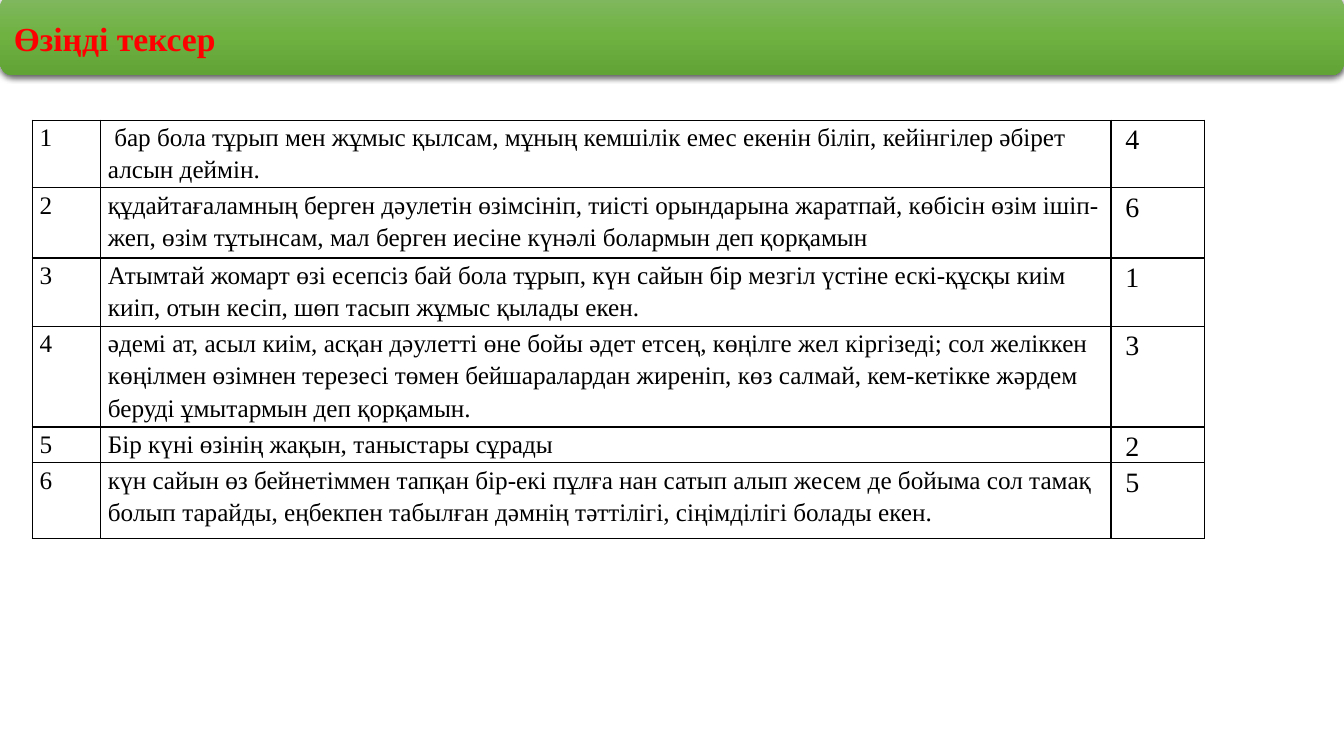
from copy import deepcopy

from lxml import etree
from pptx import Presentation
from pptx.dml.color import RGBColor
from pptx.enum.shapes import MSO_SHAPE
from pptx.enum.text import MSO_ANCHOR, PP_ALIGN
from pptx.oxml import parse_xml
from pptx.oxml.ns import nsdecls, qn
from pptx.util import Cm, Pt

ROUNDED_RECTANGLE = MSO_SHAPE.ROUNDED_RECTANGLE
MIDDLE = MSO_ANCHOR.MIDDLE
LEFT = PP_ALIGN.LEFT

BLACK = RGBColor(0x00, 0x00, 0x00)
RED = RGBColor(0xFF, 0x00, 0x00)
GREENS = (
    RGBColor(0x81, 0xB8, 0x61),
    RGBColor(0x6F, 0xB2, 0x42),
    RGBColor(0x62, 0xA3, 0x36),
)
FONT = "Times New Roman"

COLUMN_WIDTHS = (1.72, 25.47, 2.36)
ROW_HEIGHTS = (1.7, 1.77, 1.72, 2.54, 0.87, 1.91)
CELL_MARGIN = Cm(0.19)
ANSWER_MARGIN = Cm(0.36)
FIRST_LINE_INDENT = Cm(0.16)

STATEMENTS = (
    ("бар бола тұрып мен жұмыс қылсам, мұның кемшiлiк емес екенiн бiлiп, "
     "кейiнгiлер әбiрет алсын деймiн.", "4"),
    ("құдайтағаламның берген дәулетiн өзiмсiнiп, тиiстi орындарына жаратпай, "
     "көбiсiн өзiм iшiп-жеп, өзiм тұтынсам, мал берген иесiне күнәлi болармын "
     "деп қорқамын", "6"),
    ("Атымтай жомарт өзi есепсiз бай бола тұрып, күн сайын бiр мезгiл үстiне "
     "ескi-құсқы киiм киiп, отын кесiп, шөп тасып жұмыс қылады екен.", "1"),
    ("әдемi ат, асыл киiм, асқан дәулеттi өне бойы әдет етсең, көңiлге жел "
     "кiргiзедi; сол желiккен көңiлмен өзiмнен терезесi төмен бейшаралардан "
     "жиренiп, көз салмай, кем-кетiкке жәрдем берудi ұмытармын деп қорқамын.", "3"),
    ("Бiр күнi өзiнiң жақын, таныстары сұрады", "2"),
    ("күн сайын өз бейнетiммен тапқан бiр-екi пұлға нан сатып алып жесем де "
     "бойыма сол тамақ болып тарайды, еңбекпен табылған дәмнiң тәттiлiгi, "
     "сiңiмдiлiгi болады екен.", "5"),
)


def write_text(text_frame, text, size, color=BLACK, bold=False):
    paragraph = text_frame.paragraphs[0]
    paragraph.text = text
    paragraph.alignment = LEFT
    paragraph.line_spacing = 1.15
    paragraph.font.name = FONT
    paragraph.font.size = Pt(size)
    paragraph.font.bold = bold
    paragraph.font.color.rgb = color
    return paragraph


def set_gradient(shape, colors):
    shape.fill.gradient()
    shape.fill.gradient_angle = 270
    stop_list = shape._element.spPr.find(qn("a:gradFill")).find(qn("a:gsLst"))
    while len(stop_list) > len(colors):
        stop_list.remove(stop_list[-1])
    while len(stop_list) < len(colors):
        stop_list.append(deepcopy(stop_list[0]))
    for index, (stop, color) in enumerate(zip(shape.fill.gradient_stops, colors)):
        stop.position = index / (len(colors) - 1)
        stop.color.rgb = color


def set_shadow(shape):
    shape.shadow.inherit = False
    effects = shape._element.spPr.find(qn("a:effectLst"))
    effects.append(parse_xml(
        f'<a:outerShdw {nsdecls("a")} blurRad="{Pt(4.5)}" dist="{Pt(1.5)}" '
        'dir="5400000" algn="ctr" rotWithShape="0">'
        '<a:srgbClr val="000000"><a:alpha val="63000"/></a:srgbClr></a:outerShdw>'
    ))


def add_title_bar(slide, text):
    bar = slide.shapes.add_shape(
        ROUNDED_RECTANGLE, Cm(0), Cm(-0.13), Cm(33.87), Cm(2.03))
    set_gradient(bar, GREENS)
    bar.line.fill.background()
    set_shadow(bar)
    bar.text_frame.word_wrap = True
    bar.text_frame.vertical_anchor = MIDDLE
    write_text(bar.text_frame, text, 24, RED, True)


def set_borders(cell):
    properties = cell._tc.get_or_add_tcPr()
    for index, side in enumerate(("lnL", "lnR", "lnT", "lnB")):
        border = etree.Element(qn(f"a:{side}"), w=str(Pt(1)))
        fill = etree.SubElement(border, qn("a:solidFill"))
        etree.SubElement(fill, qn("a:srgbClr"), val=str(BLACK))
        properties.insert(index, border)


def fill_cell(cell, text, size, left_margin=CELL_MARGIN):
    cell.fill.background()
    cell.margin_left = left_margin
    cell.margin_right = CELL_MARGIN
    cell.margin_top = cell.margin_bottom = 0
    set_borders(cell)
    return write_text(cell.text_frame, text, size)


def add_statement_table(slide):
    table = slide.shapes.add_table(
        len(ROW_HEIGHTS), len(COLUMN_WIDTHS), Cm(0.81), Cm(3.03),
        Cm(sum(COLUMN_WIDTHS)), Cm(sum(ROW_HEIGHTS))).table
    table.first_row = False
    table.horz_banding = False
    for column, width in zip(table.columns, COLUMN_WIDTHS):
        column.width = Cm(width)
    for row, height in zip(table.rows, ROW_HEIGHTS):
        row.height = Cm(height)
    for index, (statement, answer) in enumerate(STATEMENTS):
        fill_cell(table.cell(index, 0), str(index + 1), 18)
        paragraph = fill_cell(table.cell(index, 1), statement, 18)
        if index == 0:
            paragraph._p.get_or_add_pPr().set("indent", str(FIRST_LINE_INDENT))
        fill_cell(table.cell(index, 2), answer, 20, ANSWER_MARGIN)


def main():
    presentation = Presentation()
    presentation.slide_width = Cm(33.87)
    presentation.slide_height = Cm(19.05)
    slide = presentation.slides.add_slide(presentation.slide_layouts[6])
    add_title_bar(slide, "Өзіңді тексер")
    add_statement_table(slide)
    presentation.save("out.pptx")


if __name__ == "__main__":
    main()
